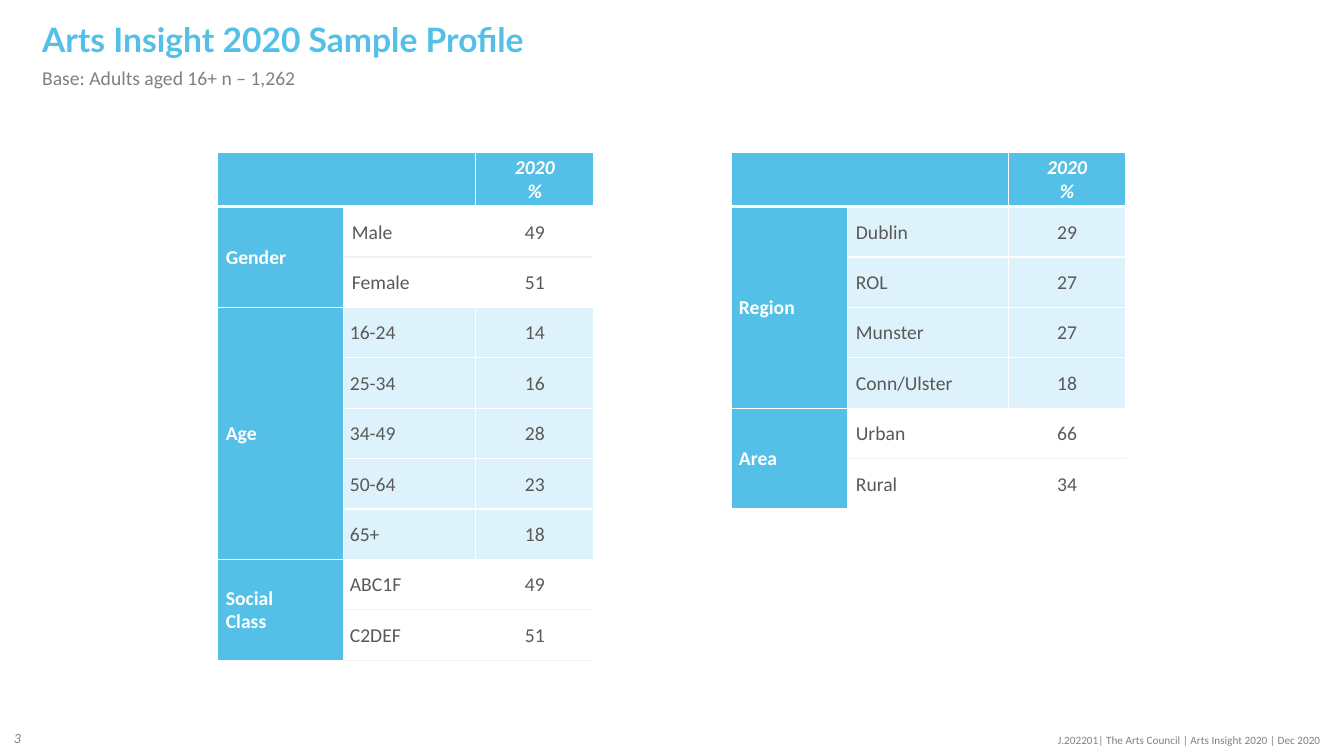
from dataclasses import dataclass

from lxml.etree import SubElement
from pptx import Presentation
from pptx.dml.color import RGBColor
from pptx.enum.text import MSO_ANCHOR, PP_ALIGN
from pptx.oxml.ns import qn
from pptx.util import Inches, Pt


@dataclass(frozen=True)
class Theme:
    blue: str = "54C0E8"
    tint: str = "DDF2FA"
    white: str = "FFFFFF"
    rule: str = "F2F2F2"
    dark: str = "595959"
    gray: str = "808080"
    font: str = "Calibri"
    title_font: str = "Lato"
    title_size: int = 24
    body_size: int = 14
    number_size: int = 10
    footer_size: int = 8


theme = Theme()


def write(frame, text, size=theme.body_size, color=theme.dark, font=theme.font,
          bold=False, italic=False, align=PP_ALIGN.LEFT, spacing=None):
    """Fill a text frame, one paragraph per line of text."""
    frame.word_wrap = True
    for index, line in enumerate(text.split("\n")):
        para = frame.add_paragraph() if index else frame.paragraphs[0]
        para.alignment = align
        para.line_spacing = spacing
        span = para.add_run()
        span.text = line
        span.font.size = Pt(size)
        span.font.name = font
        span.font.bold = bold
        span.font.italic = italic
        span.font.color.rgb = RGBColor.from_string(color)


def style_cell(cell, fill=None, inset=0.01, top=(theme.white, 1), bottom=(theme.white, 1)):
    """Set margins, the four borders and the fill of a table cell."""
    cell.vertical_anchor = MSO_ANCHOR.MIDDLE
    cell.margin_left = Inches(inset)
    cell.margin_right = cell.margin_top = Inches(0.01)
    cell.margin_bottom = 0
    properties = cell._tc.get_or_add_tcPr()
    side = (theme.white, 1)
    borders = {"a:lnL": side, "a:lnR": side, "a:lnT": top, "a:lnB": bottom}
    for index, (tag, (color, width)) in enumerate(borders.items()):
        for old in properties.findall(qn(tag)):
            properties.remove(old)
        line = SubElement(properties, qn(tag), w=str(Pt(width)))
        SubElement(SubElement(line, qn("a:solidFill")), qn("a:srgbClr"), val=color)
        properties.insert(index, line)
    if fill:
        cell.fill.solid()
        cell.fill.fore_color.rgb = RGBColor.from_string(fill)
    else:
        cell.fill.background()


deck = Presentation()
deck.slide_width, deck.slide_height = Inches(13.33), Inches(7.5)
page = deck.slides.add_slide(deck.slide_layouts[6])

# Title, base, page number and footer
texts = [
    ((0.32, 0.21, 8.7, 0.41), MSO_ANCHOR.MIDDLE, "Arts Insight 2020 Sample Profile",
     dict(size=theme.title_size, color=theme.blue, font=theme.title_font, bold=True, spacing=0.9)),
    ((0.32, 0.63, 6.07, 0.35), MSO_ANCHOR.TOP, "Base: Adults aged 16+ n – 1,262",
     dict(color=theme.gray, spacing=0.9)),
    ((0.04, 7.12, 0.58, 0.4), MSO_ANCHOR.MIDDLE, "3",
     dict(size=theme.number_size, color=theme.gray, italic=True)),
    ((10.3, 7.23, 2.9, 0.37), MSO_ANCHOR.TOP,
     "J.202201| The Arts Council | Arts Insight 2020 | Dec 2020",
     dict(size=theme.footer_size, color=theme.gray, align=PP_ALIGN.RIGHT)),
]
for place, anchor, text, style in texts:
    box = page.shapes.add_textbox(*map(Inches, place))
    box.text_frame.vertical_anchor = anchor
    write(box.text_frame, text, **style)

# Table grid, with an open column between its two halves
widths = [1.25, 1.31, 1.17, 1.36, 1.16, 1.59, 1.17]
heights = [0.54] + [0.5] * 9
table = page.shapes.add_table(
    len(heights), len(widths), Inches(2.16), Inches(1.51),
    Inches(sum(widths)), Inches(sum(heights))).table
table.first_row = table.horz_banding = False
for column, width in zip(table.columns, widths):
    column.width = Inches(width)
for row, height in zip(table.rows, heights):
    row.height = Inches(height)
header_rule = (theme.white, 3)
for row in range(len(heights)):
    for column in range(len(widths)):
        style_cell(table.cell(row, column),
                   top=header_rule if row == 1 else (theme.white, 1),
                   bottom=header_rule if row == 0 else (theme.white, 1))

# Groups: name, fill, label inset, colour of the closing rule, answers with percentages
halves = {
    0: [
        ("Gender", theme.white, 0.08, theme.white, [("Male", 49), ("Female", 51)]),
        ("Age", theme.tint, 0.06, theme.white,
         [("16-24", 14), ("25-34", 16), ("34-49", 28), ("50-64", 23), ("65+", 18)]),
        ("Social\nClass", theme.white, 0.06, theme.rule, [("ABC1F", 49), ("C2DEF", 51)]),
    ],
    4: [
        ("Region", theme.tint, 0.08, theme.white,
         [("Dublin", 29), ("ROL", 27), ("Munster", 27), ("Conn/Ulster", 18)]),
        ("Area", theme.white, 0.08, theme.white, [("Urban", 66), ("Rural", 34)]),
    ],
}
for left, groups in halves.items():
    # Header
    for column in range(left, left + 3):
        style_cell(table.cell(0, column), theme.blue, bottom=header_rule)
    table.cell(0, left).merge(table.cell(0, left + 1))
    write(table.cell(0, left + 2).text_frame, "2020\n%", color=theme.white,
          bold=True, italic=True, align=PP_ALIGN.CENTER)

    # Group names and answers
    row = 1
    for name, fill, inset, closing, answers in groups:
        first, last = row, row + len(answers) - 1
        inner = theme.rule if fill == theme.white else theme.white
        for label, value in answers:
            top = header_rule if row == 1 else (theme.white if row == first else inner, 1)
            bottom = (closing if row == last else inner, 1)
            style_cell(table.cell(row, left), theme.blue, 0.08,
                       top=header_rule if row == 1 else (theme.white, 1))
            style_cell(table.cell(row, left + 1), fill, inset, top, bottom)
            style_cell(table.cell(row, left + 2), fill, top=top, bottom=bottom)
            write(table.cell(row, left + 1).text_frame, label)
            write(table.cell(row, left + 2).text_frame, str(value), align=PP_ALIGN.CENTER)
            row += 1
        table.cell(first, left).merge(table.cell(last, left))
        write(table.cell(first, left).text_frame, name, color=theme.white, bold=True)

deck.save("out.pptx")
